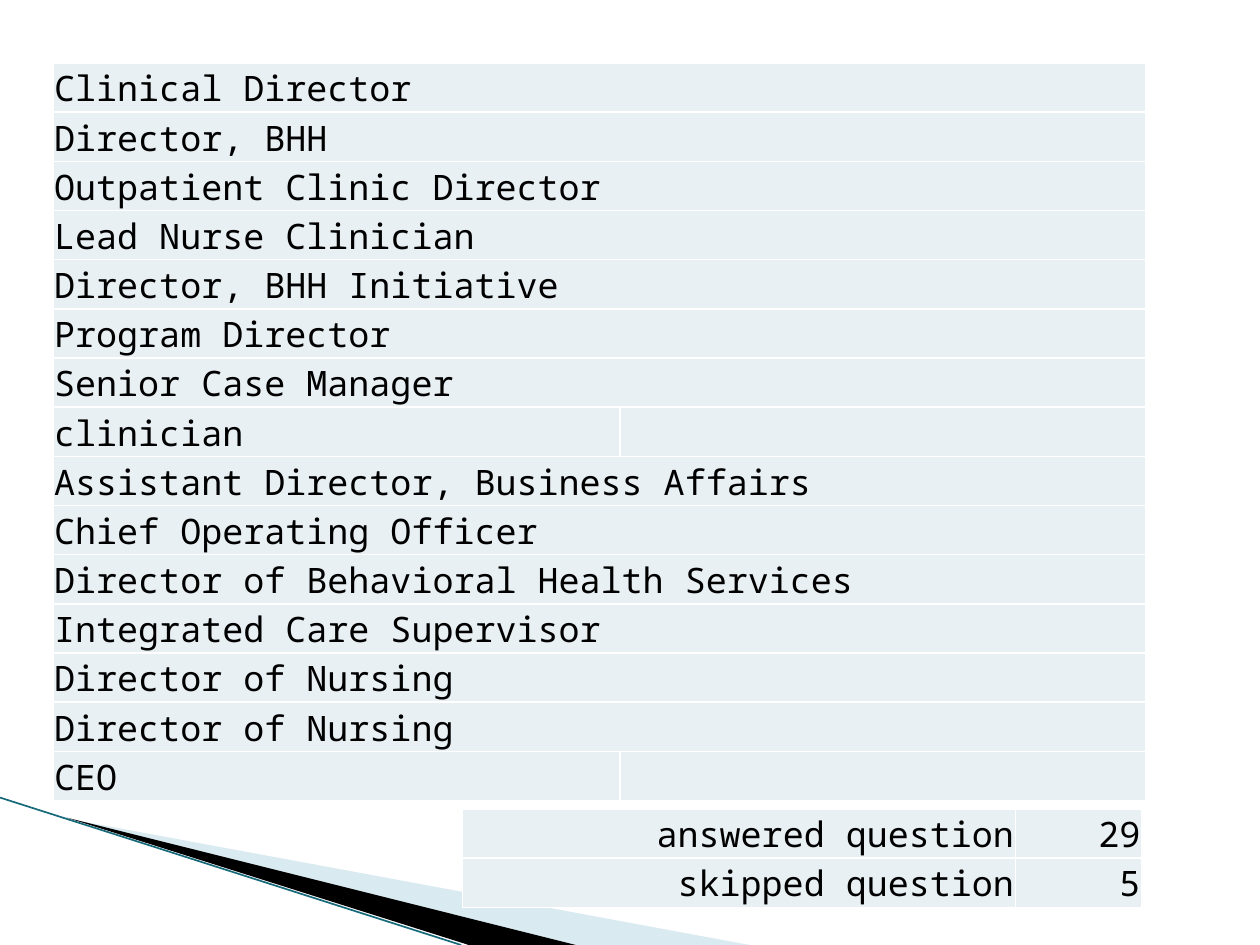
from lxml.etree import SubElement
from pptx import Presentation
from pptx.dml.color import RGBColor
from pptx.enum.shapes import MSO_CONNECTOR
from pptx.enum.text import MSO_ANCHOR, PP_ALIGN
from pptx.oxml import parse_xml
from pptx.oxml.ns import nsdecls, qn
from pptx.util import Inches, Pt

BLACK = RGBColor(0x00, 0x00, 0x00)
PALE = RGBColor(0xE8, 0xF0, 0xF4)
SKY = RGBColor(0xA0, 0xCB, 0xDC)
TEAL = RGBColor(0x16, 0x69, 0x7A)

deck = Presentation()
deck.slide_width, deck.slide_height = Inches(10), Inches(7.5)
slide = deck.slides.add_slide(deck.slide_layouts[6])

# One grid step is a hundredth of the slide's width or height
COL = deck.slide_width // 100
ROW = deck.slide_height // 100


def put(cell, text, align=PP_ALIGN.LEFT, size=20, font="Noto Sans Mono", color=BLACK):
    """Write text in a table cell with white borders and a pale fill."""
    cell.margin_left = cell.margin_top = cell.margin_right = Inches(0.01)
    cell.margin_bottom = 0
    cell.vertical_anchor = MSO_ANCHOR.BOTTOM
    props = cell._tc.get_or_add_tcPr()
    for side in ("lnL", "lnR", "lnT", "lnB"):
        props.append(parse_xml(
            f'<a:{side} w="{Pt(1)}" {nsdecls("a")}><a:solidFill>'
            f'<a:srgbClr val="FFFFFF"/></a:solidFill></a:{side}>'))
    cell.fill.solid()
    cell.fill.fore_color.rgb = PALE
    para = cell.text_frame.paragraphs[0]
    para.alignment = align
    para.font.size = Pt(size)
    if text:
        run = para.add_run()
        run.text = text
        run.font.size, run.font.name = Pt(size), font
        run.font.color.rgb = color


# Corner wedges: fill, opacity in percent, corners on the grid
wedges = [
    (SKY, 40, [(5.5, 86.67), (59.5, 100), (45.6, 100)]),
    (BLACK, 100, [(5.3, 86.53), (45.7, 100), (37.2, 100)]),
]
for color, alpha, spots in wedges:
    spots = [(int(x * COL), int(y * ROW)) for x, y in spots]
    pen = slide.shapes.build_freeform(*spots[0])
    pen.add_line_segments(spots[1:], close=True)
    wedge = pen.convert_to_shape()
    wedge.shadow.inherit = False
    wedge.fill.solid()
    wedge.fill.fore_color.rgb = color
    wedge.line.fill.background()
    if alpha < 100:
        tone = wedge._element.spPr.find(qn("a:solidFill"))[0]
        SubElement(tone, qn("a:alpha"), val=str(alpha * 1000))

# Thin line along the wedges
edge = slide.shapes.add_connector(
    MSO_CONNECTOR.STRAIGHT, 0, int(84.4 * ROW), int(36.6 * COL), 100 * ROW)
edge.line.color.rgb = TEAL
edge.line.width = Pt(0.95)
SubElement(edge._element.spPr, qn("a:effectLst"))

# Tables: left, top, height, column widths, alignment, rows
titles = [
    "Clinical Director", "Director, BHH", "Outpatient Clinic Director",
    "Lead Nurse Clinician", "Director, BHH Initiative", "Program Director",
    "Senior Case Manager", "clinician", "Assistant Director, Business Affairs",
    "Chief Operating Officer", "Director of Behavioral Health Services",
    "Integrated Care Supervisor", "Director of Nursing", "Director of Nursing",
    "CEO",
]
split = ("clinician", "CEO")
counts = [("answered question", "29"), ("skipped question", "5")]
tables = [
    (4.2, 6.67, 68.4, (45, 41.7), PP_ALIGN.LEFT, [(name, "") for name in titles]),
    (36.7, 85.6, 9.2, (43.9, 10), PP_ALIGN.RIGHT, counts),
]
for left, top, high, wide, align, lines in tables:
    grid = slide.shapes.add_table(
        len(lines), len(wide), int(left * COL), int(top * ROW),
        int(sum(wide) * COL), int(high * ROW)).table
    grid.first_row = grid.horz_banding = False
    for part, width in zip(grid.columns, wide):
        part.width = int(width * COL)
    for r, line in enumerate(lines):
        for c, text in enumerate(line):
            put(grid.cell(r, c), text, align=align)
        if not line[1] and line[0] not in split:
            grid.cell(r, 0).merge(grid.cell(r, 1))

deck.save("out.pptx")
